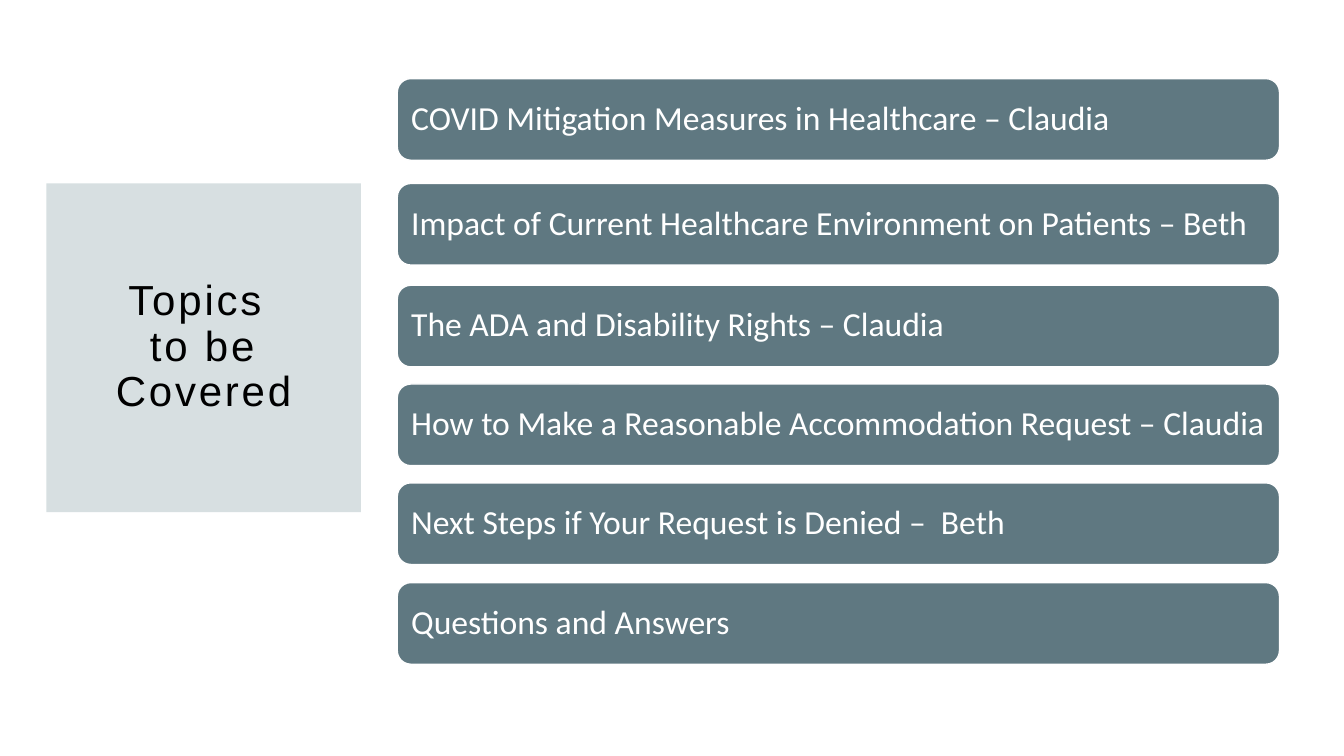
from dataclasses import dataclass

from pptx import Presentation
from pptx.dml.color import RGBColor
from pptx.enum.shapes import MSO_SHAPE
from pptx.enum.text import MSO_ANCHOR, MSO_AUTO_SIZE, PP_ALIGN
from pptx.slide import Slide
from pptx.text.text import TextFrame, _Run
from pptx.util import Inches, Pt

COLORS = {
    "title_panel": "D7DFE1",
    "title_text": "000000",
    "topic_bar": "5F7881",
    "topic_text": "FFFFFF",
    "topic_outline": "FFFFFF",
}


@dataclass(frozen=True)
class Topic:
    top: float
    wording: str


TOPICS = [
    Topic(0.78, "COVID Mitigation Measures in Healthcare – Claudia"),
    Topic(1.82, "Impact of Current Healthcare Environment on Patients – Beth"),
    Topic(2.83, "The ADA and Disability Rights – Claudia"),
    Topic(3.81, "How to Make a Reasonable Accommodation Request – Claudia"),
    Topic(4.79, "Next Steps if Your Request is Denied –  Beth"),
    Topic(5.78, "Questions and Answers"),
]


def color(role: str) -> RGBColor:
    return RGBColor.from_string(COLORS[role])


def format_run(run: _Run, typeface: str, size: float, role: str) -> None:
    run.font.name = typeface
    run.font.size = Pt(size)
    run.font.color.rgb = color(role)


def set_frame(frame: TextFrame, inset: float, right_inset: float) -> None:
    frame.word_wrap = True
    frame.auto_size = MSO_AUTO_SIZE.NONE
    frame.vertical_anchor = MSO_ANCHOR.MIDDLE
    frame.margin_left = frame.margin_top = frame.margin_bottom = Inches(inset)
    frame.margin_right = Inches(right_inset)


def add_title(slide: Slide) -> None:
    title = slide.shapes.title
    title.left, title.top = Inches(0.46), Inches(1.82)
    title.width, title.height = Inches(3.12), Inches(3.26)
    title.fill.solid()
    title.fill.fore_color.rgb = color("title_panel")
    set_frame(title.text_frame, 0.2, 0.2)
    heading = title.text_frame.paragraphs[0]
    heading.alignment = PP_ALIGN.CENTER
    heading.line_spacing = 0.9
    for index, line in enumerate(["Topics ", "to be Covered"]):
        if index:
            heading.add_line_break()
        run = heading.add_run()
        run.text = line
        format_run(run, "Arial", 30, "title_text")
        run.font._element.set("spc", "200")


def add_topic(slide: Slide, topic: Topic) -> None:
    bar = slide.shapes.add_shape(
        MSO_SHAPE.ROUNDED_RECTANGLE,
        Inches(3.94), Inches(topic.top), Inches(8.75), Inches(0.81),
    )
    bar.shadow.inherit = False
    bar.fill.solid()
    bar.fill.fore_color.rgb = color("topic_bar")
    bar.line.color.rgb = color("topic_outline")
    bar.line.width = Pt(1)
    set_frame(bar.text_frame, 0.1, 0.05)
    entry = bar.text_frame.paragraphs[0]
    entry.alignment = PP_ALIGN.LEFT
    entry.line_spacing = 0.9
    run = entry.add_run()
    run.text = topic.wording
    format_run(run, "Calibri", 24, "topic_text")


def main() -> None:
    deck = Presentation()
    deck.slide_width, deck.slide_height = Inches(13.33), Inches(7.5)
    slide = deck.slides.add_slide(deck.slide_layouts[5])
    add_title(slide)
    for topic in TOPICS:
        add_topic(slide, topic)
    deck.save("out.pptx")


if __name__ == "__main__":
    main()
